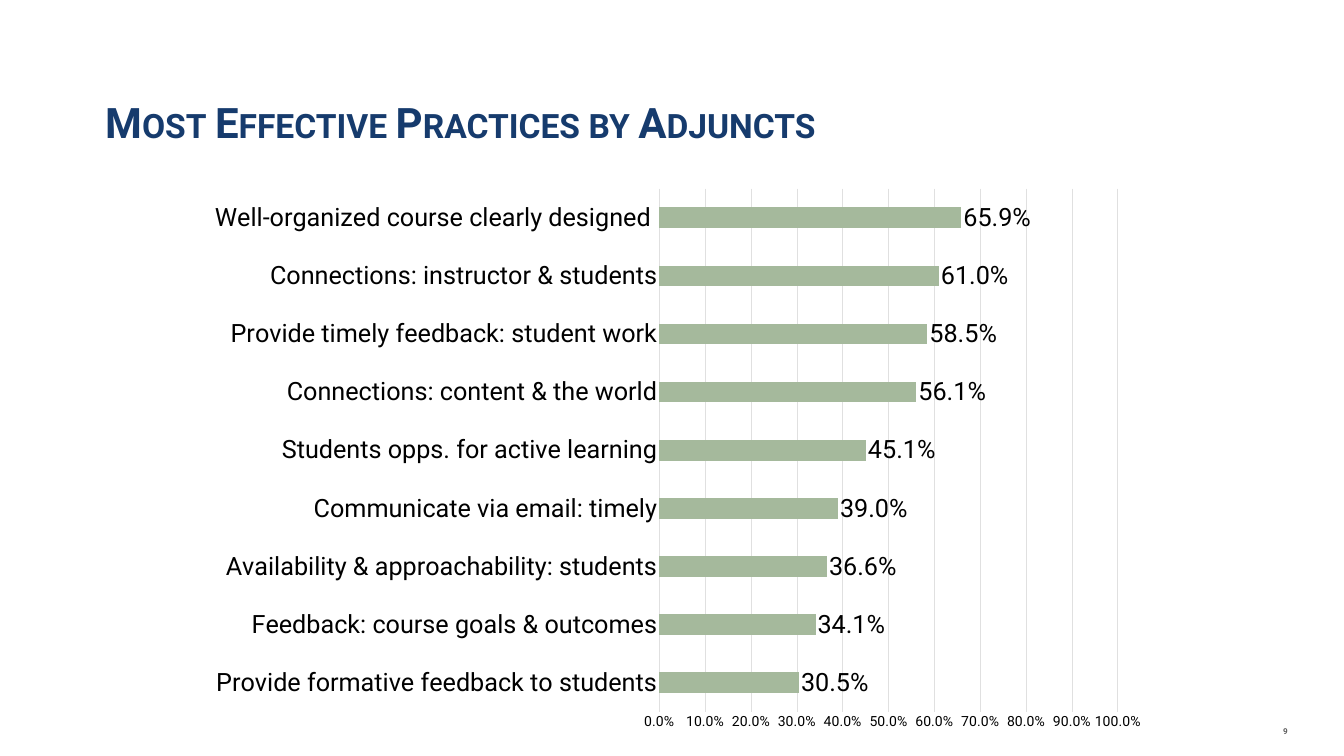
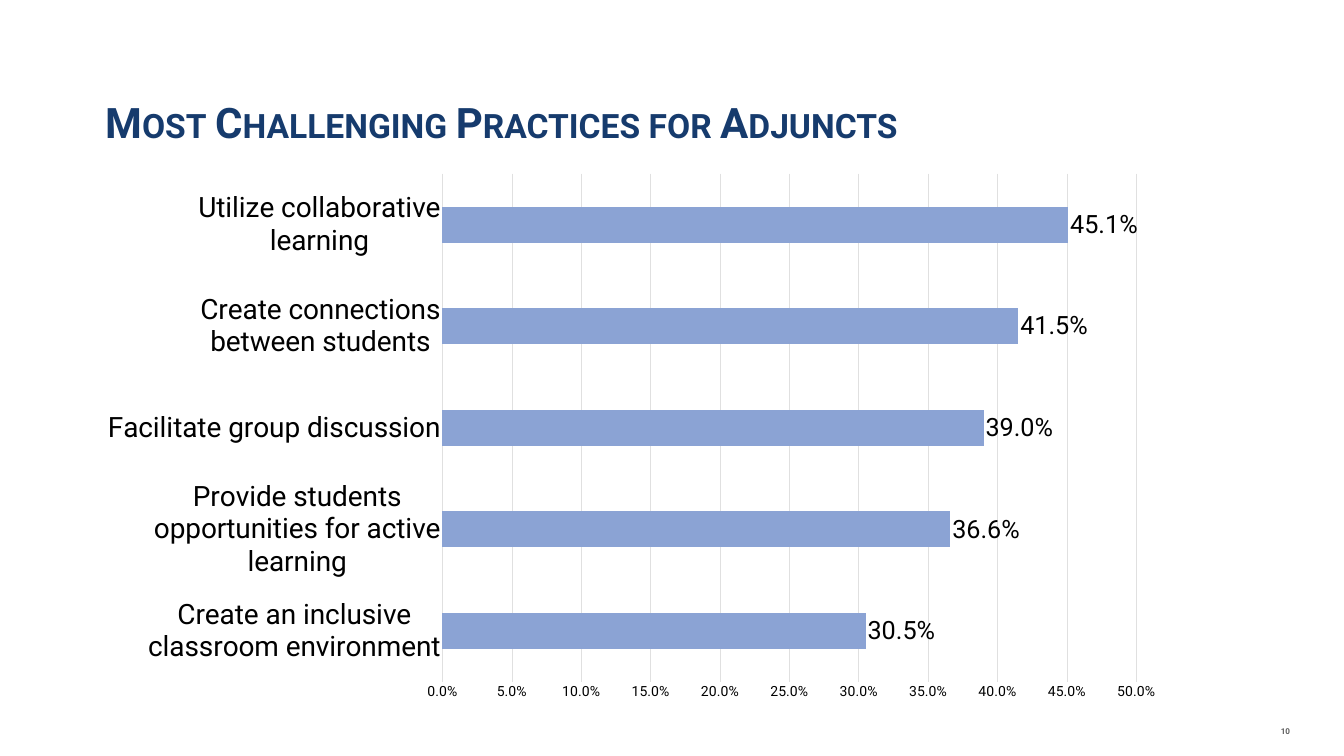
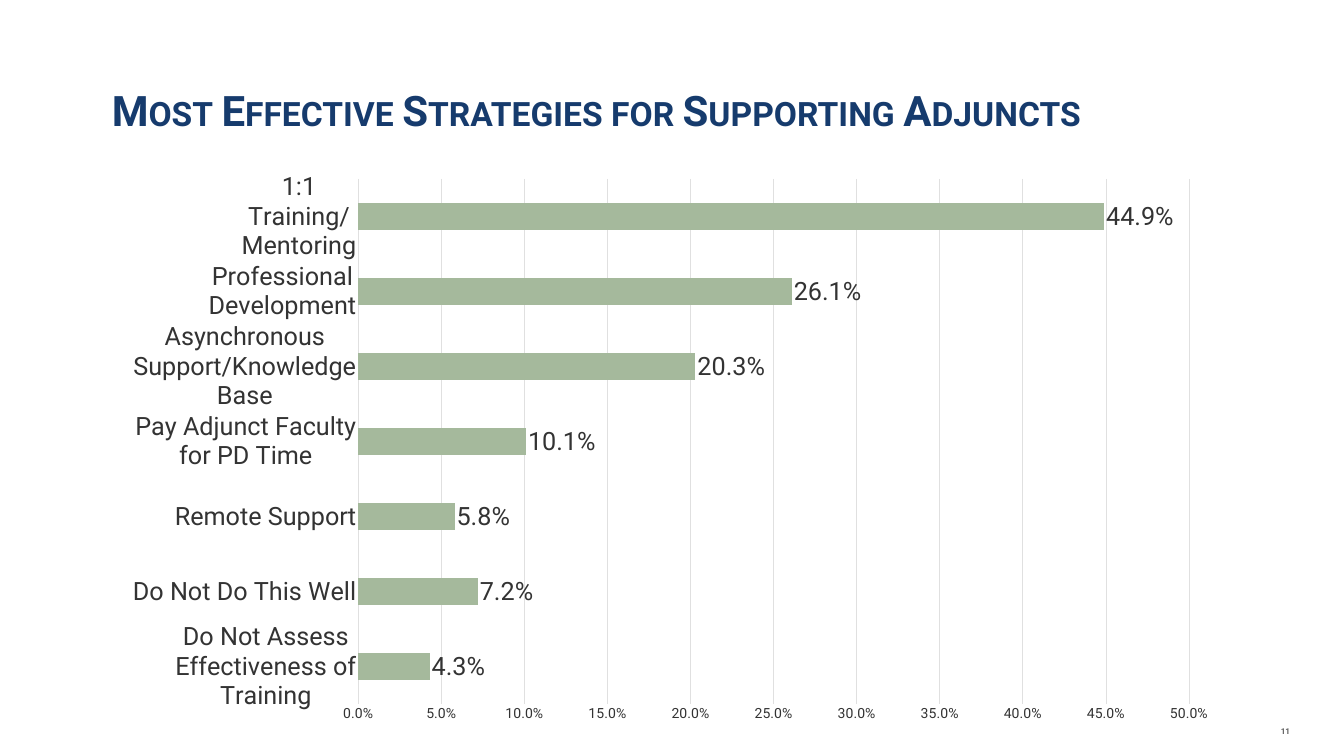
from dataclasses import dataclass
from typing import Optional

from lxml import etree
from pptx import Presentation
from pptx.chart.data import CategoryChartData
from pptx.dml.color import RGBColor
from pptx.enum.chart import XL_CHART_TYPE, XL_LABEL_POSITION, XL_TICK_MARK
from pptx.enum.text import MSO_AUTO_SIZE, PP_ALIGN
from pptx.oxml.ns import qn
from pptx.util import Inches, Pt

# Shared look
FONT = "Roboto"
NAVY, GREY, GRID = "163B6D", "5E5E5E", "E0E0E0"
BLACK, CHARCOAL = "000000", "333333"
GREEN, BLUE = "A5B99C", "8BA3D4"
PERCENT = "0.0%"


@dataclass
class BarSlide:
    title: str
    number: int
    title_at: tuple[float, float]
    chart_at: tuple[float, float, float, float]
    bars: list[tuple[str, float]]  # bottom to top
    fill: str
    text_color: str = BLACK
    label_size: int = 36
    maximum: Optional[float] = None
    plot: Optional[tuple[float, float, float, float]] = None


SLIDES = [
    BarSlide(
        "Most Effective Practices by Adjuncts", 9, (1.99, 1.87),
        (3.88, 3.52, 19.14, 11.2),
        [
            ("Provide formative feedback to students", 0.305),
            ("Feedback: course goals & outcomes", 0.341),
            ("Availability & approachability: students", 0.366),
            ("Communicate via email: timely", 0.39),
            ("Students opps. for active learning", 0.451),
            ("Connections: content & the world", 0.561),
            ("Provide timely feedback: student work", 0.585),
            ("Connections: instructor & students", 0.61),
            ("Well-organized course clearly designed ", 0.659),
        ],
        GREEN, maximum=1,
    ),
    BarSlide(
        "Most Challenging Practices for Adjuncts", 10, (1.99, 1.87),
        (1.99, 2.68, 21.02, 11.63),
        [
            ("Create an inclusive classroom environment", 0.305),
            ("Provide students opportunities for active learning", 0.366),
            ("Facilitate group discussion", 0.39),
            ("Create connections between students", 0.415),
            ("Utilize collaborative learning", 0.451),
        ],
        BLUE, label_size=40, plot=(0.323, 0.066, 0.655, 0.867),
    ),
    BarSlide(
        "Most Effective Strategies for Supporting Adjuncts", 11, (2.12, 1.62),
        (2.25, 2.92, 21.89, 11.64),
        [
            ("Do Not Assess Effectiveness of Training", 0.043),
            ("Do Not Do This Well", 0.072),
            ("Remote Support", 0.058),
            ("Pay Adjunct Faculty for PD Time", 0.101),
            ("Asynchronous Support/Knowledge Base", 0.203),
            ("Professional Development", 0.261),
            ("1:1 Training/Mentoring", 0.449),
        ],
        GREEN, text_color=CHARCOAL, plot=(0.222, 0.054, 0.753, 0.895),
    ),
]


def rgb(color: str) -> RGBColor:
    return RGBColor.from_string(color)


def style_font(font, size: float, color: str, name: str = FONT, bold: bool = False) -> None:
    font.name, font.size, font.bold = name, Pt(size), bold
    font.color.rgb = rgb(color)


def add_text(slide, text: str, at: tuple, inset: tuple, size: float, color: str,
             align=PP_ALIGN.LEFT, **run_attributes: str) -> None:
    """Add a bold one-line box; run attributes hold caps or baseline."""
    tf = slide.shapes.add_textbox(*map(Inches, at)).text_frame
    tf.word_wrap = True
    tf.auto_size = MSO_AUTO_SIZE.SHAPE_TO_FIT_TEXT
    tf.margin_left = tf.margin_right = Inches(inset[0])
    tf.margin_top = tf.margin_bottom = Inches(inset[1])
    p = tf.paragraphs[0]
    p.alignment = align
    style_font(p.font, size, color, bold=True)
    r = p.add_run()
    r.text = text
    for key, value in run_attributes.items():
        r._r.get_or_add_rPr().set(key, value)


def set_plot_area(chart, plot: tuple) -> None:
    """Fix the inner plot area as fractions of the chart."""
    area = chart._chartSpace.chart.plotArea
    for old in area.findall(qn("c:layout")):
        area.remove(old)
    layout = etree.Element(qn("c:layout"))
    manual = etree.SubElement(layout, qn("c:manualLayout"))
    settings = [("layoutTarget", "inner"), ("xMode", "edge"), ("yMode", "edge")]
    settings += zip("xywh", plot)
    for tag, value in settings:
        etree.SubElement(manual, qn(f"c:{tag}")).set("val", str(value))
    area.insert(0, layout)


def style_line(line, color: str) -> None:
    line.color.rgb = rgb(color)
    line.width = Pt(0.75)


def add_bar_chart(slide, item: BarSlide) -> None:
    data = CategoryChartData(number_format=PERCENT)
    data.categories = [label for label, _ in item.bars]
    data.add_series("Series 1", [value for _, value in item.bars])
    chart = slide.shapes.add_chart(
        XL_CHART_TYPE.BAR_CLUSTERED, *map(Inches, item.chart_at), data).chart
    chart.has_title = chart.has_legend = False
    style_font(chart.font, 10, CHARCOAL, "Arial")

    # Axes
    cat, val = chart.category_axis, chart.value_axis
    for axis, size in ((cat, item.label_size), (val, 20)):
        axis.major_tick_mark = axis.minor_tick_mark = XL_TICK_MARK.NONE
        style_font(axis.tick_labels.font, size, item.text_color)
    style_line(cat.format.line, GRID)
    val.format.line.fill.background()
    val.has_major_gridlines = True
    style_line(val.major_gridlines.format.line, GRID)
    val.tick_labels.number_format = PERCENT
    val.tick_labels.number_format_is_linked = False
    if item.maximum is not None:
        val.maximum_scale = item.maximum

    # Bars and their values
    plot = chart.plots[0]
    plot.gap_width = 182
    plot.vary_by_categories = False
    fill = plot.series[0].format.fill
    fill.solid()
    fill.fore_color.rgb = rgb(item.fill)
    labels = plot.series[0].data_labels
    labels.show_value = True
    labels.position = XL_LABEL_POSITION.OUTSIDE_END
    labels.number_format = PERCENT
    labels.number_format_is_linked = False
    style_font(labels.font, 36, item.text_color)
    if item.plot:
        set_plot_area(chart, item.plot)


def main() -> None:
    prs = Presentation()
    prs.slide_width, prs.slide_height = Inches(26.67), Inches(15)
    for item in SLIDES:
        s = prs.slides.add_slide(prs.slide_layouts[6])
        add_text(s, item.title, (*item.title_at, 22.7, 1.11), (0.1, 0.05),
                 60, NAVY, cap="small")
        add_text(s, str(item.number), (25.28, 14.31, 0.46, 0.51), (0.06, 0.06),
                 20, GREY, PP_ALIGN.CENTER, baseline="30000")
        add_bar_chart(s, item)
    prs.save("out.pptx")


if __name__ == "__main__":
    main()
